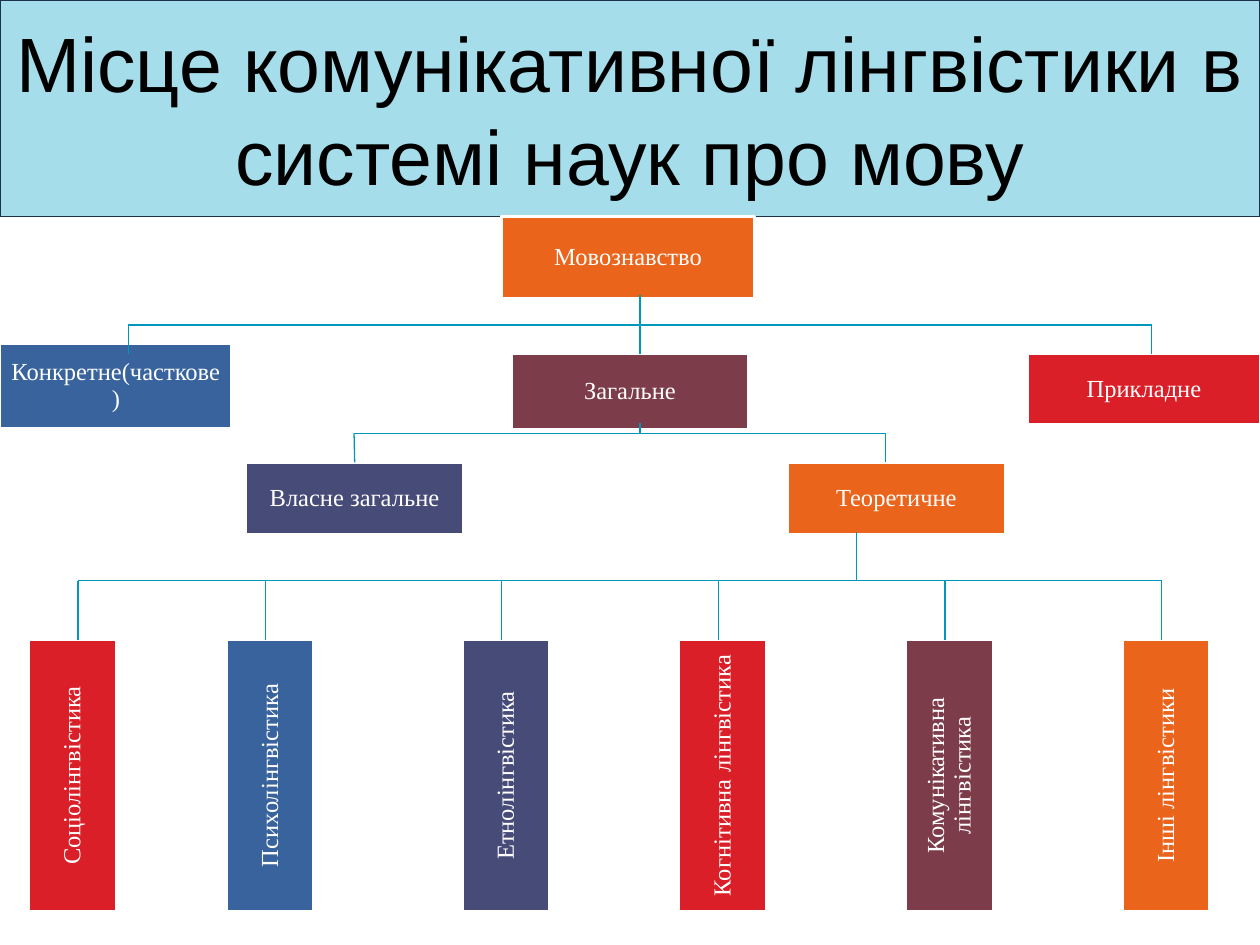
from dataclasses import dataclass

from lxml.etree import SubElement
from pptx import Presentation
from pptx.dml.color import RGBColor as Rgb
from pptx.enum.shapes import MSO_CONNECTOR as Connector, MSO_SHAPE as Preset
from pptx.enum.text import MSO_ANCHOR as Anchor, MSO_AUTO_SIZE as AutoSize, PP_ALIGN as Align
from pptx.oxml.ns import qn
from pptx.util import Inches, Pt


@dataclass(frozen=True)
class Theme:
    """Colours, fonts and type sizes of the slide."""
    banner: Rgb = Rgb.from_string("A6DDEA")
    banner_edge: Rgb = Rgb.from_string("1C314E")
    black: Rgb = Rgb.from_string("000000")
    white: Rgb = Rgb.from_string("FFFFFF")
    red: Rgb = Rgb.from_string("DA1F28")
    orange: Rgb = Rgb.from_string("EB641B")
    blue: Rgb = Rgb.from_string("39639D")
    indigo: Rgb = Rgb.from_string("474B78")
    plum: Rgb = Rgb.from_string("7D3C4A")
    branch: Rgb = Rgb.from_string("0097BD")
    title_font: str = "Arial"
    label_font: str = "Times New Roman"
    title_size: Pt = Pt(44)
    label_size: Pt = Pt(14)
    thin: Pt = Pt(0.75)
    border: Pt = Pt(1.5)


THEME = Theme()

BRANCHES = [
    ("Мовознавство", 3.98, 1.72, 2.01, 0.65, THEME.orange),
    ("Конкретне(часткове)", 0, 2.73, 1.84, 0.67, THEME.blue),
    ("Загальне", 4.06, 2.81, 1.88, 0.6, THEME.plum),
    ("Прикладне", 8.16, 2.81, 1.84, 0.56, THEME.red),
    ("Власне загальне", 1.95, 3.67, 1.73, 0.57, THEME.indigo),
    ("Теоретичне", 6.25, 3.67, 1.73, 0.57, THEME.orange),
]
DISCIPLINES = [
    ("Соціолінгвістика", 0.23, 0.62, THEME.red),
    ("Психолінгвістика", 1.8, 2.11, THEME.blue),
    ("Етнолінгвістика", 3.67, 3.98, THEME.indigo),
    ("Когнітивна лінгвістика", 5.39, 5.7, THEME.red),
    ("Комунікативна лінгвістика", 7.19, 7.5, THEME.plum),
    ("Інші лінгвістики", 8.91, 9.22, THEME.orange),
]
DISCIPLINE_TOP = 5.08


def paint(shape, fill, edge, width):
    """Give a shape a solid fill and a solid outline."""
    shape.fill.solid()
    shape.fill.fore_color.rgb = fill
    shape.line.color.rgb = edge
    shape.line.width = width


def write(frame, text, font_name, size, color):
    """Put one centred paragraph into a text frame and return it."""
    frame.text = text
    frame.word_wrap = True
    frame.auto_size = AutoSize.NONE
    frame.vertical_anchor = Anchor.MIDDLE
    paragraph = frame.paragraphs[0]
    paragraph.alignment = Align.CENTER
    font = paragraph.runs[0].font
    font.name, font.size, font.color.rgb = font_name, size, color
    return paragraph


def add_title(slide, text):
    """Turn the title placeholder into the banner across the top."""
    title = slide.shapes.title
    title.left, title.top = Inches(0), Inches(0)
    title.width, title.height = Inches(10), Inches(1.72)
    paint(title, THEME.banner, THEME.banner_edge, THEME.thin)
    write(title.text_frame, text, THEME.title_font, THEME.title_size, THEME.black)


def add_node(slide, text, left, top, width, height, fill, upright=False):
    """Add a labelled box of the tree, with its text turned if upright."""
    node = slide.shapes.add_shape(
        Preset.RECTANGLE, Inches(left), Inches(top), Inches(width), Inches(height))
    node.shadow.inherit = False
    paint(node, fill, THEME.white, THEME.border)
    frame = node.text_frame
    frame.margin_left = frame.margin_right = Inches(0.06)
    frame.margin_top = frame.margin_bottom = Inches(0.06)
    label = write(frame, text, THEME.label_font, THEME.label_size, THEME.white)
    label.line_spacing = 0.9
    if upright:
        node.element.txBody.bodyPr.set("vert", "vert270")
    return node


def add_branch(slide, x1, y1, x2, y2):
    """Add one straight line of the tree."""
    branch = slide.shapes.add_connector(
        Connector.STRAIGHT, Inches(x1), Inches(y1), Inches(x2), Inches(y2))
    branch.line.color.rgb = THEME.branch
    branch.line.width = THEME.thin
    SubElement(branch.element.spPr, qn("a:effectLst"))
    return branch


def add_fork(slide, stem_x, stem_top, bar_y, drop_xs, drop_bottom):
    """Add a stem, the bar below it and a drop to each child, and return the drops."""
    add_branch(slide, drop_xs[0], bar_y, drop_xs[-1], bar_y)
    add_branch(slide, stem_x, stem_top, stem_x, bar_y)
    return [add_branch(slide, x, bar_y, x, drop_bottom) for x in drop_xs]


def main():
    """Build the slide and save it."""
    deck = Presentation()
    deck.slide_width, deck.slide_height = Inches(10), Inches(7.5)
    slide = deck.slides.add_slide(deck.slide_layouts[5])
    add_title(slide, "Місце комунікативної лінгвістики в системі наук про мову")

    nodes = {branch[0]: add_node(slide, *branch) for branch in BRANCHES}
    for text, left, _, fill in DISCIPLINES:
        add_node(slide, text, left, DISCIPLINE_TOP, 0.69, 2.15, fill, upright=True)

    add_fork(slide, 5.08, 2.34, 2.58, [1.02, 5.08, 9.14], 2.81)
    general_drops = add_fork(slide, 5.08, 3.36, 3.44, [2.81, 7.03], 3.67)
    general_drops[0].end_connect(nodes["Власне загальне"], 0)
    drop_xs = [drop_x for _, _, drop_x, _ in DISCIPLINES]
    add_fork(slide, 6.8, 4.22, 4.61, drop_xs, DISCIPLINE_TOP)

    deck.save("out.pptx")


if __name__ == "__main__":
    main()
